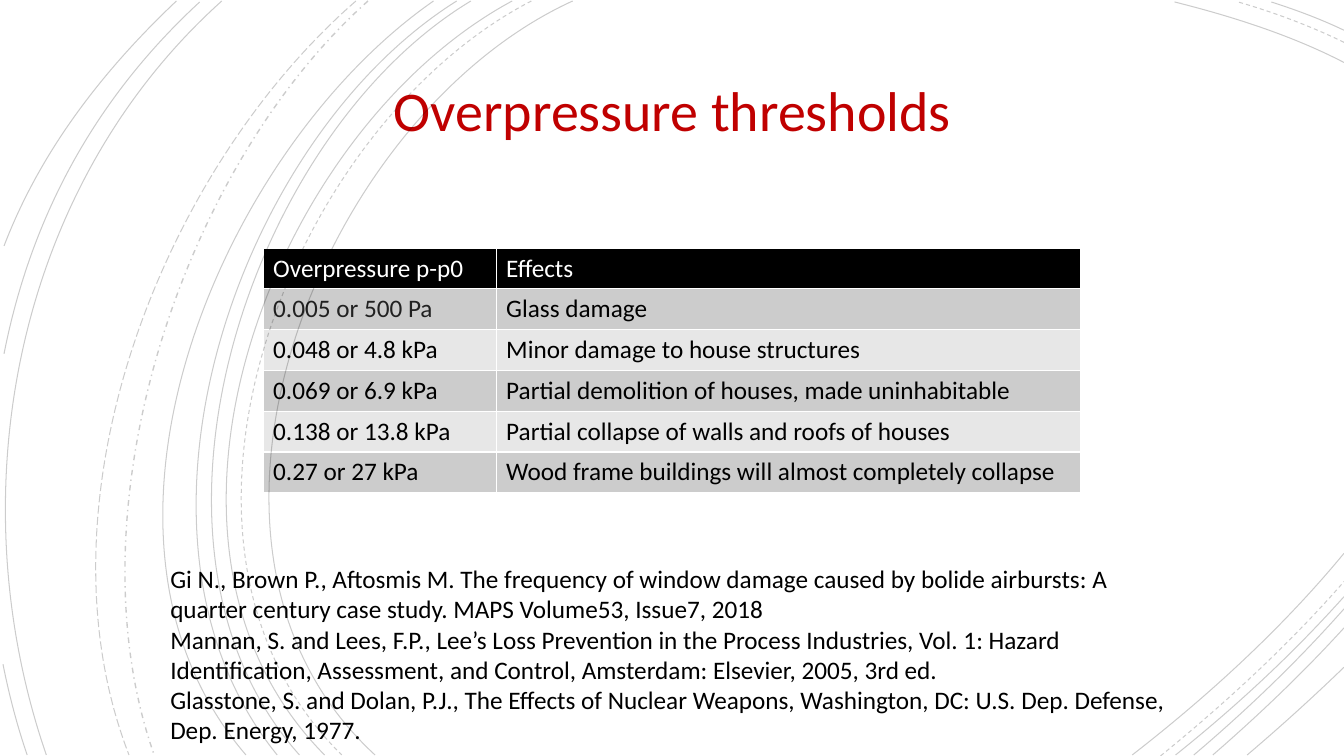
from lxml.etree import SubElement
from pptx import Presentation
from pptx.dml.color import RGBColor
from pptx.enum.dml import MSO_LINE
from pptx.enum.text import MSO_ANCHOR, MSO_AUTO_SIZE, PP_ALIGN
from pptx.oxml.ns import qn
from pptx.util import Inches, Pt

SLIDE_WIDTH = Inches(13.33)
SLIDE_HEIGHT = Inches(7.5)
COLUMN = SLIDE_WIDTH / 100
ROW = SLIDE_HEIGHT / 100

FONT = "Calibri"
BLACK = RGBColor(0x00, 0x00, 0x00)
WHITE = RGBColor(0xFF, 0xFF, 0xFF)
RED = RGBColor(0xC0, 0x00, 0x00)
CHARCOAL = RGBColor(0x21, 0x21, 0x21)
BANDS = (RGBColor(0xE7, 0xE7, 0xE7), RGBColor(0xCC, 0xCC, 0xCC))

THRESHOLDS = [
    ("Overpressure p-p0", "Effects"),
    ("0.005 or 500 Pa", "Glass damage"),
    ("0.048 or 4.8 kPa", "Minor damage to house structures"),
    ("0.069 or 6.9 kPa", "Partial demolition of houses, made uninhabitable"),
    ("0.138 or 13.8 kPa", "Partial collapse of walls and roofs of houses"),
    ("0.27 or 27 kPa", "Wood frame buildings will almost completely collapse"),
]

REFERENCES = [
    "Gi N., Brown P., Aftosmis M. The frequency of window damage caused by bolide airbursts: "
    "A quarter century case study. MAPS Volume53, Issue7, 2018",
    "Mannan, S. and Lees, F.P., Lee’s Loss Prevention in the Process Industries, Vol. 1: Hazard "
    "Identification, Assessment, and Control, Amsterdam: Elsevier, 2005, 3rd ed.",
    "Glasstone, S. and Dolan, P.J., The Effects of Nuclear Weapons, Washington, DC: "
    "U.S. Dep. Defense, Dep. Energy, 1977.",
]

SOLID_ARCS = [
    ((5.68, 0.01), (3.18, 1.15), (1.46, 5.41), (3.72, 7.49)),
    ((13.33, 0.62), (12.81, 0.35), (12.21, 0.16), (11.65, 0.02)),
    ((11.23, 7.49), (11.99, 6.9), (12.72, 6.23), (13.33, 5.49)),
    ((5.08, 0.01), (2.72, 1.28), (1.12, 5.37), (3.22, 7.49)),
    ((13.33, 0.3), (13.1, 0.19), (12.86, 0.1), (12.61, 0.02)),
    ((11.66, 7.49), (12.26, 7.01), (12.82, 6.49), (13.33, 5.92)),
    ((4.67, 0.01), (2.46, 1.34), (1.12, 5.42), (2.97, 7.49)),
    ((11.84, 7.49), (12.37, 7.04), (12.87, 6.56), (13.33, 6.04)),
    ((4.53, 0.01), (2.34, 1.38), (1, 5.34), (2.75, 7.49)),
    ((12.03, 7.49), (12.49, 7.09), (12.93, 6.67), (13.33, 6.23)),
    ((4.3, 0.01), (2.2, 1.47), (0.56, 5.3), (2.44, 7.49)),
    ((12.37, 7.49), (12.7, 7.21), (13.02, 6.92), (13.33, 6.62)),
    ((2.2, 0.01), (0.14, 1.86), (-0.43, 4.91), (0.46, 7.49)),
    ((1.98, 0.02), (0.95, 0.97), (0.31, 2.14), (0.04, 3.51)),
    ((0.03, 6.59), (0.09, 6.89), (0.17, 7.2), (0.27, 7.49)),
    ((1.75, 0.01), (1.02, 0.7), (0.4, 1.5), (0.04, 2.44)),
]
DASHED_ARCS = [
    ((5.27, 0.01), (2.87, 1.25), (1.25, 5.38), (3.39, 7.49)),
    ((13.33, 0.42), (13, 0.26), (12.63, 0.12), (12.28, 0.02)),
    ((11.51, 7.5), (12.15, 6.98), (12.78, 6.4), (13.33, 5.77)),
]
DASH_DOT_ARCS = [((3.65, 0.01), (1.79, 1.67), (0.68, 5.09), (1.53, 7.49))]
LONG_DASH_ARCS = [((3.53, 0.01), (1.6, 1.69), (0.31, 4.99), (1.28, 7.49))]
ARC_STYLES = [
    (SOLID_ARCS, MSO_LINE.SOLID, 0.75),
    (DASHED_ARCS, MSO_LINE.DASH, 0.75),
    (DASH_DOT_ARCS, MSO_LINE.DASH_DOT, 1),
    (LONG_DASH_ARCS, MSO_LINE.LONG_DASH, 0.75),
]


def grid_box(left, top, width, height):
    return (round(left * COLUMN), round(top * ROW),
            round(width * COLUMN), round(height * ROW))


def write_text(text_frame, text, size=18, color=BLACK, align=PP_ALIGN.LEFT, spacing=1.0):
    text_frame.text = text
    for paragraph in text_frame.paragraphs:
        paragraph.alignment = align
        paragraph.line_spacing = spacing
        font = paragraph.runs[0].font
        font.name = FONT
        font.size = Pt(size)
        font.bold = False
        font.color.rgb = color


def add_title(slide, box):
    text_frame = slide.shapes.add_textbox(*box).text_frame
    text_frame.word_wrap = True
    text_frame.vertical_anchor = MSO_ANCHOR.MIDDLE
    write_text(text_frame, "Overpressure thresholds", size=40, color=RED,
               align=PP_ALIGN.CENTER, spacing=0.9)


def set_borders(cell):
    properties = cell._tc.get_or_add_tcPr()
    for side in "LRTB":
        line = SubElement(properties, qn(f"a:ln{side}"), w=str(Pt(1)))
        fill = SubElement(line, qn("a:solidFill"))
        SubElement(fill, qn("a:srgbClr"), val=str(WHITE))


def add_thresholds_table(slide, box):
    left, top, width, height = box
    table = slide.shapes.add_table(len(THRESHOLDS), 2, *box).table
    table.columns[0].width = round(width * 0.285)
    table.columns[1].width = width - table.columns[0].width
    for row_index, texts in enumerate(THRESHOLDS):
        table.rows[row_index].height = round(height / len(THRESHOLDS))
        is_header = row_index == 0
        for column_index, text in enumerate(texts):
            cell = table.cell(row_index, column_index)
            set_borders(cell)
            cell.fill.solid()
            cell.fill.fore_color.rgb = BLACK if is_header else BANDS[row_index % 2]
            color = WHITE if is_header else BLACK
            if (row_index, column_index) == (1, 0):
                color = CHARCOAL
            write_text(cell.text_frame, text, color=color)


def add_references(slide, box):
    text_frame = slide.shapes.add_textbox(*box).text_frame
    text_frame.word_wrap = True
    text_frame.auto_size = MSO_AUTO_SIZE.SHAPE_TO_FIT_TEXT
    write_text(text_frame, "\n".join(REFERENCES))


def bend_outline(shape):
    segments = list(shape._element.iter(qn("a:lnTo")))
    curve = SubElement(segments[0].getparent(), qn("a:cubicBezTo"))
    for segment in segments:
        curve.append(segment[0])
        segment.getparent().remove(segment)


def add_arc(slide, box, controls, dash, width):
    left, top = box[:2]
    points = [(left + Inches(x), top + Inches(y)) for x, y in controls]
    builder = slide.shapes.build_freeform(*points[0])
    builder.add_line_segments(points[1:], close=False)
    shape = builder.convert_to_shape()
    bend_outline(shape)
    shape.shadow.inherit = False
    shape.fill.background()
    shape.line.color.rgb = BLACK
    shape.line.width = Pt(width)
    shape.line.dash_style = dash
    color = shape.line._ln.find(f".//{qn('a:srgbClr')}")
    SubElement(color, qn("a:alpha"), val="20000")


def add_arcs(slide, box):
    for arcs, dash, width in ARC_STYLES:
        for controls in arcs:
            add_arc(slide, box, controls, dash, width)


def main():
    presentation = Presentation()
    presentation.slide_width = SLIDE_WIDTH
    presentation.slide_height = SLIDE_HEIGHT
    slide = presentation.slides.add_slide(presentation.slide_layouts[6])
    slide.background.fill.solid()
    slide.background.fill.fore_color.rgb = WHITE
    add_title(slide, grid_box(6.9, 5.33, 86.27, 19.33))
    add_thresholds_table(slide, grid_box(19.58, 32.8, 60.84, 32.4))
    add_references(slide, grid_box(11.93, 73.87, 76.44, 25.6))
    add_arcs(slide, grid_box(0, 0, 100, 100))
    presentation.save("out.pptx")


if __name__ == "__main__":
    main()
